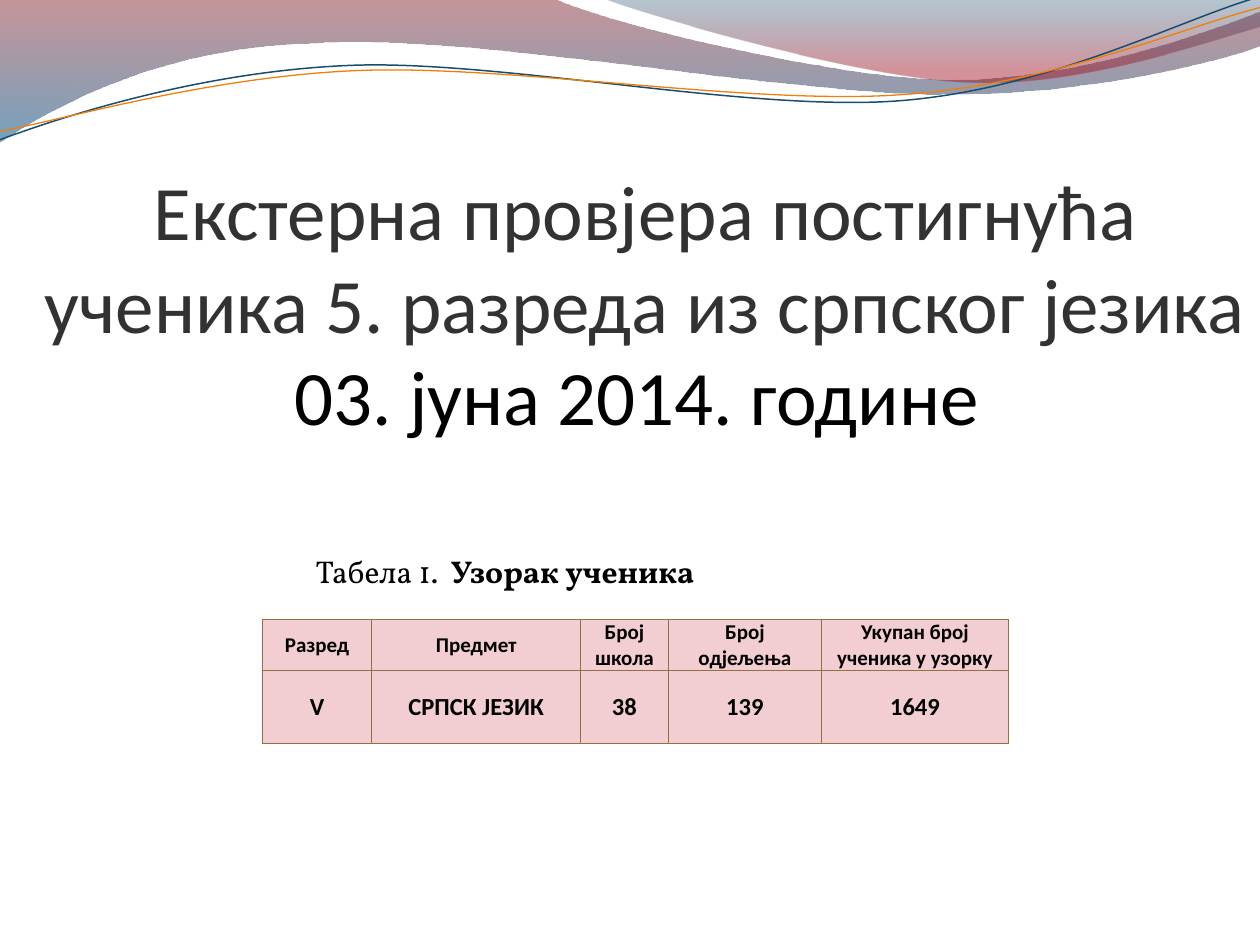
import pptx
import pptx.dml.color
import pptx.enum.text
import pptx.oxml.ns
import pptx.util
from lxml import etree

Pt = pptx.util.Pt
ALIGN = pptx.enum.text.PP_ALIGN
ANCHOR = pptx.enum.text.MSO_ANCHOR
qn = pptx.oxml.ns.qn

COLORS = {
    "maroon": "7E1621", "blue": "005689", "navy": "094467", "red": "A10F1F",
    "teal": "184E6D", "orange": "F07F09", "gray": "323232", "black": "000000",
    "pink": "F2CED2", "border": "907141",
}

WAVES = [
    ([(0, 0), (316.8, -0.7), (342.7, 12.2, 478.1, 45.4, 545.8, 45.4),
      (614.2, 45.4, 689.8, 18.7, 720, 6.5), (720.7, 25.9),
      (707.8, 31.7, 626.4, 54.7, 537.1, 54), (447.8, 54, 275, 20.2, 185, 24.5),
      (92.9, 25.9, 33.1, 59.8, -0.7, 81.4)],
     [(0, "maroon", 45), (1, "blue", 55)]),
    ([(344.9, -0.7), (366.5, 7.9, 491, 44.6, 553.7, 46.8),
      (616.3, 49.7, 691.9, 23, 720, 15.1), (720, 0)],
     [(0, "navy", 30), (0.8, "red", 45)]),
]
STROKES = [
    ([(-1.4, 62.9), (33.8, 51.7, 114.1, 29.4, 199.8, 29.9),
      (284.8, 30.3, 425.8, 67.3, 512.4, 64.9),
      (599, 62.4, 676.5, 25.7, 720.2, 15.5)], "teal", 0.85),
    ([(-1.1, 58), (32.9, 53.8, 118.3, 32.5, 204.1, 33),
      (290.6, 33.4, 428.9, 63.8, 515.5, 61.4),
      (601.3, 59.6, 678.5, 30.1, 721.4, 21.3)], "orange", 0.75),
]
STROKE_ANGLE = 357.3
COLUMNS = [62.4, 119.5, 49.9, 87.8, 106.6]
ROWS = [
    (23, 12, ["Разред", "Предмет", "Број школа", "Број одјељења",
              "Укупан број ученика у узорку"]),
    (41.8, 14, ["V", "СРПСК ЈЕЗИК", "38", "139", "1649"]),
]


def rgb(name):
    return pptx.dml.color.RGBColor.from_string(COLORS[name])


def add_text(p, text, size, font="Calibri", color="black", bold=False):
    r = p.add_run()
    r.text = text
    r.font.size = Pt(size)
    r.font.name = font
    r.font.bold = bold
    r.font.color.rgb = rgb(color)


def add_curve(s, x, y, path, close):
    points = [(Pt(x + seg[i]), Pt(y + seg[i + 1]))
              for seg in path for i in range(0, len(seg), 2)]
    fb = s.shapes.build_freeform(*points[0])
    fb.add_line_segments(points[1:], close=close)
    sp = fb.convert_to_shape()
    sp.shadow.inherit = False
    nodes = iter(list(sp._element.iter(qn("a:lnTo"))))
    for seg in path[1:]:
        first = next(nodes)
        if len(seg) == 6:
            curve = etree.Element(qn("a:cubicBezTo"))
            first.addprevious(curve)
            for node in (first, next(nodes), next(nodes)):
                curve.append(node[0])
                node.getparent().remove(node)
    return sp


def add_waves(s, x, y):
    for path, stops in WAVES:
        sp = add_curve(s, x, y, path, True)
        sp.line.fill.background()
        sp.fill.gradient()
        sp.fill.gradient_angle = 270
        for stop, (pos, color, opacity) in zip(sp.fill.gradient_stops, stops):
            stop.position = pos
            stop.color.rgb = rgb(color)
        for clr, (pos, color, opacity) in zip(sp._element.spPr.iter(qn("a:srgbClr")), stops):
            etree.SubElement(clr, qn("a:alpha"), val=str(opacity * 1000))
    for path, color, width in STROKES:
        sp = add_curve(s, x, y, path, False)
        sp.rotation = STROKE_ANGLE
        sp.fill.background()
        sp.line.color.rgb = rgb(color)
        sp.line.width = Pt(width)


def add_title(s, x, y, w, h):
    tf = s.shapes.add_textbox(Pt(x), Pt(y), Pt(w), Pt(h)).text_frame
    tf.word_wrap = True
    tf.vertical_anchor = ANCHOR.BOTTOM
    tf.margin_left = tf.margin_right = tf.margin_bottom = 0
    p = tf.paragraphs[0]
    p.alignment = ALIGN.CENTER
    add_text(p, "Екстерна провјера постигнућа ученика 5. разреда из српског језика",
             44, color="gray")
    p.add_line_break()
    add_text(p, "03. јуна 2014. године ", 44)


def add_caption(s, x, y, w, h):
    tf = s.shapes.add_textbox(Pt(x), Pt(y), Pt(w), Pt(h)).text_frame
    tf.word_wrap = False
    tf.auto_size = pptx.enum.text.MSO_AUTO_SIZE.SHAPE_TO_FIT_TEXT
    p = tf.paragraphs[0]
    p._p.get_or_add_pPr().set("indent", str(Pt(35.3)))
    add_text(p, "Табела 1.", 18, font="Vollkorn")
    add_text(p, "  Узорак ученика", 18, font="Vollkorn", bold=True)


def add_borders(cell):
    tcPr = cell._tc.get_or_add_tcPr()
    for side in ("lnL", "lnR", "lnT", "lnB"):
        ln = etree.SubElement(tcPr, qn("a:" + side), w=str(Pt(0.75)))
        fill = etree.SubElement(ln, qn("a:solidFill"))
        etree.SubElement(fill, qn("a:srgbClr"), val=COLORS["border"])


def add_sample_table(s, x, y):
    height = sum(row[0] for row in ROWS)
    table = s.shapes.add_table(len(ROWS), len(COLUMNS), Pt(x), Pt(y),
                               Pt(sum(COLUMNS)), Pt(height)).table
    table.first_row = table.horz_banding = False
    for col, width in zip(table.columns, COLUMNS):
        col.width = Pt(width)
    for row, (h, size, values) in zip(table.rows, ROWS):
        row.height = Pt(h)
        for cell, value in zip(row.cells, values):
            add_borders(cell)
            cell.fill.solid()
            cell.fill.fore_color.rgb = rgb("pink")
            cell.vertical_anchor = ANCHOR.MIDDLE
            cell.margin_left = cell.margin_right = Pt(5)
            cell.margin_top = cell.margin_bottom = 0
            p = cell.text_frame.paragraphs[0]
            p.alignment = ALIGN.CENTER
            add_text(p, value, size, bold=True)


def main():
    prs = pptx.Presentation()
    prs.slide_width, prs.slide_height = Pt(720), Pt(540)
    s = prs.slides.add_slide(prs.slide_layouts[6])
    add_waves(s, 0, 0)
    add_title(s, 18, 162, 702, 90)
    add_sample_table(s, 150, 354.2)
    add_caption(s, 138, 312, 273, 29)
    prs.save("out.pptx")


if __name__ == "__main__":
    main()
